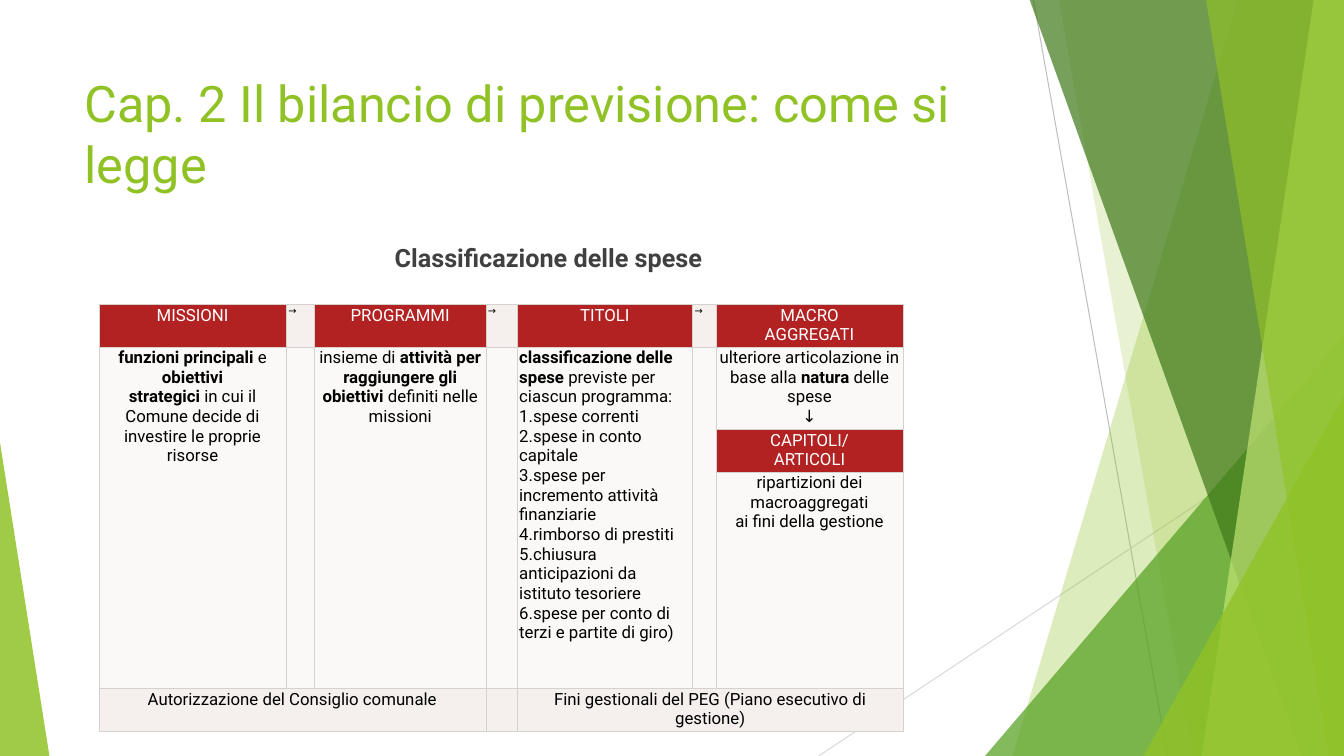
from dataclasses import dataclass

from lxml import etree
from pptx import Presentation
from pptx.dml.color import RGBColor
from pptx.enum.shapes import MSO_CONNECTOR, MSO_SHAPE
from pptx.enum.text import MSO_ANCHOR, PP_ALIGN
from pptx.oxml.ns import qn
from pptx.util import Pt

STRAIGHT = MSO_CONNECTOR.STRAIGHT
TRIANGLE = MSO_SHAPE.ISOSCELES_TRIANGLE
CENTER, LEFT = PP_ALIGN.CENTER, PP_ALIGN.LEFT
TOP = MSO_ANCHOR.TOP
PX = 9144
SLIDE_W, SLIDE_H = 1333, 750


@dataclass(frozen=True)
class Theme:
    font: str = "Roboto"
    green: str = "90C226"
    mid_green: str = "54A021"
    dark_green: str = "3F7819"
    pale_green: str = "C0E474"
    grey: str = "BFBFBF"
    light_grey: str = "D9D9D9"
    heading: str = "404040"
    black: str = "000000"
    white: str = "FFFFFF"
    red: str = "B22222"
    sand: str = "F5F0ED"
    ivory: str = "FAF9F7"
    border: str = "D7D1CE"
    title_size: int = 36
    heading_size: int = 18
    cell_size: int = 12
    arrow_size: int = 7


THEME = Theme()

COLUMNS = [186, 28, 170, 31, 174, 23, 186]
ROWS = [40, 81, 40, 215, 41]
HEADERS = ["MISSIONI", "PROGRAMMI", "TITOLI", "MACRO\nAGGREGATI"]
MISSIONI = [
    ("funzioni principali ", True), ("e ", False), ("obiettivi\nstrategici", True),
    (" in cui il Comune decide di\ninvestire le proprie risorse", False),
]
PROGRAMMI = [
    ("insieme di ", False), ("attività per raggiungere gli obiettivi", True),
    (" definiti nelle missioni", False),
]
TITOLI = [("classificazione delle spese", True), (" previste per ciascun programma:", False)]
SPESE = [
    "spese correnti",
    "spese in conto capitale",
    "spese per incremento attività finanziarie",
    "rimborso di prestiti",
    "chiusura anticipazioni da istituto tesoriere",
    "spese per conto di terzi e partite di giro)",
]
MACRO = [
    ("ulteriore articolazione in base alla ", False), ("natura ", True), ("delle spese", False),
]


def rgb(color):
    return RGBColor.from_string(color)


def paint(shape, color, opacity):
    shape.shadow.inherit = False
    shape.fill.solid()
    shape.fill.fore_color.rgb = rgb(color)
    shape.line.fill.background()
    tone = shape.fill._xPr.find(qn("a:solidFill"))[0]
    etree.SubElement(tone, qn("a:alpha"), val=str(opacity * 1000))


def add_ray(slide, start, end, color):
    ray = slide.shapes.add_connector(STRAIGHT, *(v * PX for v in start + end))
    ray.line.color.rgb = rgb(color)
    ray.line.width = Pt(0.75)
    etree.SubElement(ray._element.spPr, qn("a:effectLst"))


def add_blade(slide, top_left, bottom_left, color, opacity):
    builder = slide.shapes.build_freeform(top_left, -1, scale=PX)
    builder.add_line_segments([(SLIDE_W, -1), (SLIDE_W, SLIDE_H), (bottom_left, SLIDE_H)])
    paint(builder.convert_to_shape(), color, opacity)


def add_triangle(slide, left, top, width, apex, color, opacity):
    box = (left, top, width, SLIDE_H - top)
    triangle = slide.shapes.add_shape(TRIANGLE, *(v * PX for v in box))
    triangle.adjustments[0] = apex
    paint(triangle, color, opacity)


def add_runs(paragraph, runs, size, color):
    for text, bold in runs:
        for index, line in enumerate(text.split("\n")):
            if index:
                paragraph.add_line_break()
            run = paragraph.add_run()
            run.text = line
            run.font.name = THEME.font
            run.font.size = Pt(size)
            run.font.bold = bold
            run.font.color.rgb = rgb(color)


def add_text(slide, box, text, size, color, bold, align):
    frame = slide.shapes.add_textbox(*(v * PX for v in box)).text_frame
    frame.word_wrap = True
    frame.vertical_anchor = TOP
    paragraph = frame.paragraphs[0]
    paragraph.alignment = align
    add_runs(paragraph, [(text, bold)], size, color)
    return paragraph


def style_cell(cell, fill):
    cell.margin_left = cell.margin_right = 2 * PX
    cell.margin_top = cell.margin_bottom = PX
    properties = cell._tc.get_or_add_tcPr()
    for side in ("a:lnL", "a:lnR", "a:lnT", "a:lnB"):
        edge = etree.SubElement(properties, qn(side), w=str(Pt(0.38)))
        solid = etree.SubElement(edge, qn("a:solidFill"))
        etree.SubElement(solid, qn("a:srgbClr"), val=THEME.border)
    cell.fill.solid()
    cell.fill.fore_color.rgb = rgb(fill)


def write_cell(cell, paragraphs, color=THEME.black, align=CENTER, size=THEME.cell_size):
    frame = cell.text_frame
    for index, runs in enumerate(paragraphs):
        paragraph = frame.add_paragraph() if index else frame.paragraphs[0]
        paragraph.alignment = align
        add_runs(paragraph, runs, size, color)


def number_paragraphs(paragraphs):
    for paragraph in paragraphs:
        properties = paragraph._p.get_or_add_pPr()
        properties.set("marL", "0")
        properties.set("indent", "0")
        etree.SubElement(properties, qn("a:buAutoNum"), type="arabicPeriod")


def add_expense_table(slide):
    box = (98, 302, sum(COLUMNS), sum(ROWS))
    table = slide.shapes.add_table(
        len(ROWS), len(COLUMNS), *(v * PX for v in box)).table
    table.first_row = table.horz_banding = False
    for column, width in zip(table.columns, COLUMNS):
        column.width = width * PX
    for row, height in zip(table.rows, ROWS):
        row.height = height * PX

    last_row, last_column = len(ROWS) - 1, len(COLUMNS) - 1
    red_cells = {(0, c) for c in range(0, len(COLUMNS), 2)} | {(2, last_column)}
    for r in range(len(ROWS)):
        for c in range(len(COLUMNS)):
            plain = THEME.sand if r in (0, last_row) else THEME.ivory
            style_cell(table.cell(r, c), THEME.red if (r, c) in red_cells else plain)
    for c in range(last_column):
        table.cell(1, c).merge(table.cell(3, c))
    for c in (0, 4):
        table.cell(last_row, c).merge(table.cell(last_row, c + 2))

    for index, header in enumerate(HEADERS):
        write_cell(table.cell(0, 2 * index), [[(header, False)]], THEME.white)
    for c in range(1, last_column, 2):
        write_cell(table.cell(0, c), [[("→", False)]], align=LEFT, size=THEME.arrow_size)

    write_cell(table.cell(1, 0), [MISSIONI])
    write_cell(table.cell(1, 2), [PROGRAMMI])
    titoli = table.cell(1, 4)
    write_cell(titoli, [TITOLI] + [[(spesa, False)] for spesa in SPESE], align=LEFT)
    number_paragraphs(titoli.text_frame.paragraphs[1:])
    write_cell(table.cell(1, 6), [MACRO, [("↓", False)]])
    write_cell(table.cell(2, 6), [[("CAPITOLI/\nARTICOLI", False)]], THEME.white)
    write_cell(table.cell(3, 6),
               [[("ripartizioni dei macroaggregati\nai fini della gestione", False)]])
    write_cell(table.cell(4, 0), [[("Autorizzazione del Consiglio comunale", False)]])
    write_cell(table.cell(4, 4),
               [[("Fini gestionali del PEG (Piano esecutivo di gestione)", False)]])


def add_backdrop(slide):
    add_ray(slide, (1025, 0), (1158, SLIDE_H), THEME.grey)
    add_ray(slide, (SLIDE_W, 403), (812, SLIDE_H), THEME.light_grey)
    add_blade(slide, 1228, 1004, THEME.green, 30)
    add_blade(slide, 1050, 1183, THEME.green, 20)
    add_triangle(slide, 977, 333, 356, 1, THEME.mid_green, 72)
    add_blade(slide, 1021, 1291, THEME.dark_green, 70)
    add_blade(slide, 1303, 1192, THEME.pale_green, 70)
    add_blade(slide, 1196, 1318, THEME.green, 65)
    add_triangle(slide, 1134, 393, 199, 1, THEME.green, 80)
    add_triangle(slide, 0, 439, 49, 0, THEME.green, 85)


def main():
    deck = Presentation()
    deck.slide_width, deck.slide_height = SLIDE_W * PX, SLIDE_H * PX
    slide = deck.slides.add_slide(deck.slide_layouts[6])
    add_backdrop(slide)
    add_text(slide, (74, 67, 940, 144), "Cap. 2 Il bilancio di previsione: come si legge",
             THEME.title_size, THEME.green, False, LEFT)
    heading = add_text(slide, (74, 236, 940, 424), "Classificazione delle spese",
                       THEME.heading_size, THEME.heading, True, CENTER)
    heading.space_before = Pt(10)
    add_expense_table(slide)
    deck.save("out.pptx")


if __name__ == "__main__":
    main()
